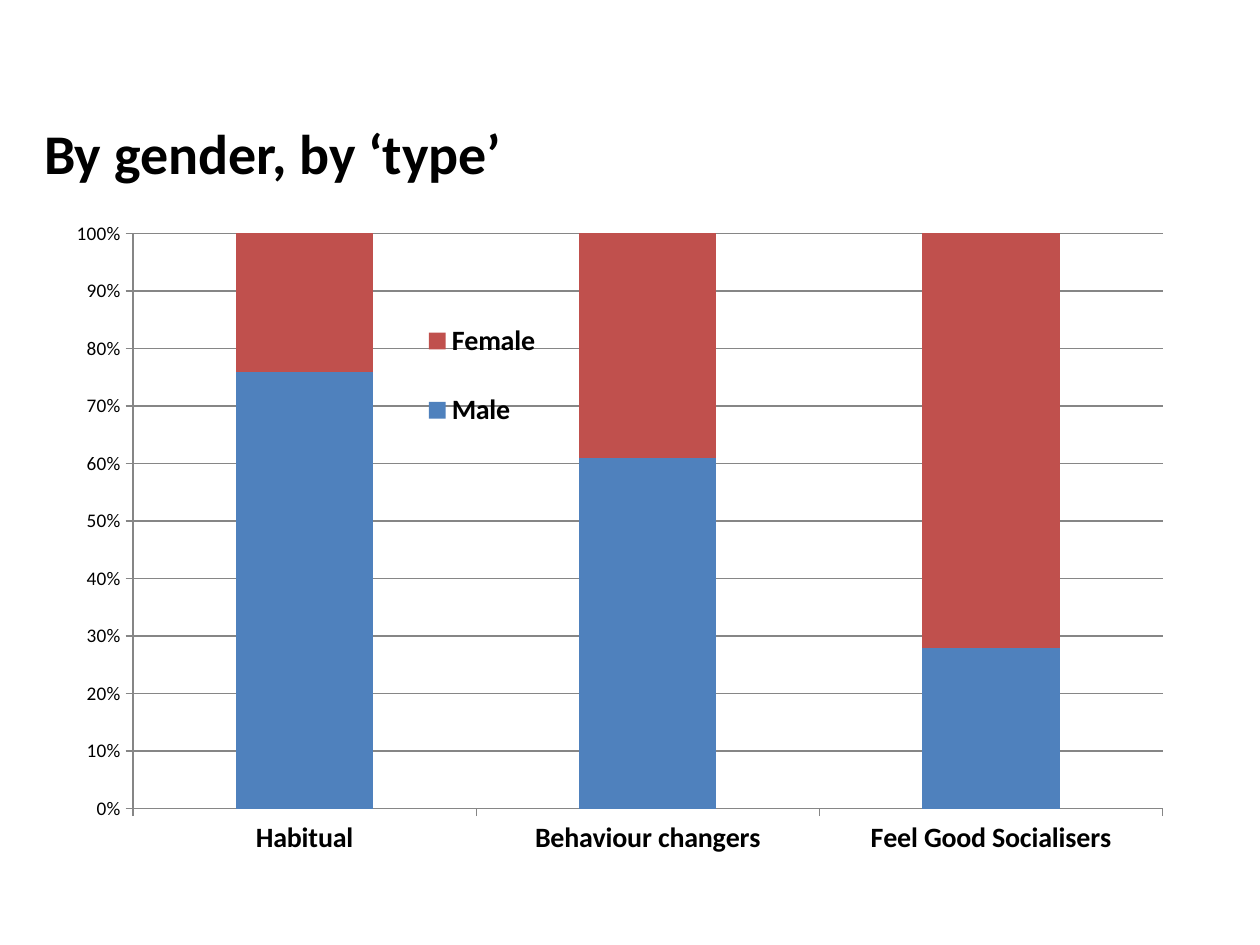
from lxml.etree import SubElement
from pptx import Presentation
from pptx.chart.data import CategoryChartData
from pptx.dml.color import RGBColor
from pptx.enum.chart import XL_CHART_TYPE, XL_LEGEND_POSITION, XL_TICK_MARK
from pptx.enum.text import MSO_ANCHOR
from pptx.oxml.ns import qn
from pptx.util import Cm, Pt

TITLE = "By gender, by ‘type’"
CATEGORIES = ["Habitual", "Behaviour changers", "Feel Good Socialisers"]
SERIES = [
    ("Male", [76, 61, 28], "4F81BD"),
    ("Female", [24, 39, 72], "C0504D"),
]
BLACK, GREY = "000000", "868686"
TITLE_FONT = {"name": "Calibri", "size": Pt(32), "bold": True}
CHART_FONT = {"name": "Calibri", "size": Pt(10)}
LABEL_FONT = {"name": "Calibri", "size": Pt(16), "bold": True}
VALUE_FONT = {"name": "Calibri", "size": Pt(11), "bold": False}
PLOT_LAYOUT = {"x": 0.07, "y": 0.05, "w": 0.9, "h": 0.83}
LEGEND_LAYOUT = {"x": 0.31, "y": 0.13, "w": 0.13, "h": 0.25}


def color(value):
    return RGBColor.from_string(value)


def set_font(font, values):
    for name, value in values.items():
        setattr(font, name, value)
    font.color.rgb = color(BLACK)


def set_line(line):
    line.color.rgb = color(GREY)
    line.width = Pt(0.75)


def set_layout(parent, position, fractions, inner=False):
    for old in parent.findall(qn("c:layout")):
        parent.remove(old)
    layout = SubElement(parent, qn("c:layout"))
    parent.insert(position, layout)
    manual = SubElement(layout, qn("c:manualLayout"))
    settings = {"layoutTarget": "inner"} if inner else {}
    settings.update(xMode="edge", yMode="edge", **fractions)
    for name, value in settings.items():
        SubElement(manual, qn(f"c:{name}")).set("val", str(value))


def add_title(page):
    box = page.shapes.add_textbox(Cm(0.64), Cm(2.11), Cm(22.86), Cm(1.9))
    frame = box.text_frame
    frame.word_wrap = True
    frame.vertical_anchor = MSO_ANCHOR.MIDDLE
    span = frame.paragraphs[0].add_run()
    span.text = TITLE
    set_font(span.font, TITLE_FONT)


def add_gender_chart(page):
    data = CategoryChartData(number_format="General")
    data.categories = CATEGORIES
    for name, values, _ in SERIES:
        data.add_series(name, values)
    chart = page.shapes.add_chart(
        XL_CHART_TYPE.COLUMN_STACKED_100,
        Cm(1.07), Cm(4.01), Cm(23.06), Cm(13.97), data,
    ).chart
    chart.has_title = False
    set_font(chart.font, CHART_FONT)

    plot = chart.plots[0]
    plot.gap_width, plot.overlap, plot.vary_by_categories = 150, 100, False
    for series, (_, _, fill) in zip(plot.series, SERIES):
        series.format.fill.solid()
        series.format.fill.fore_color.rgb = color(fill)

    for axis, font in ((chart.category_axis, LABEL_FONT), (chart.value_axis, VALUE_FONT)):
        axis.major_tick_mark = XL_TICK_MARK.OUTSIDE
        axis.minor_tick_mark = XL_TICK_MARK.NONE
        set_font(axis.tick_labels.font, font)
        set_line(axis.format.line)
    value_axis = chart.value_axis
    value_axis.has_major_gridlines = True
    set_line(value_axis.major_gridlines.format.line)
    value_axis.major_unit = 0.1
    value_axis.tick_labels.number_format = "0%"
    value_axis.tick_labels.number_format_is_linked = False

    chart.has_legend = True
    legend = chart.legend
    legend.position = XL_LEGEND_POSITION.RIGHT
    legend.include_in_layout = False
    set_font(legend.font, LABEL_FONT)

    space = chart.element
    set_layout(space.find(".//" + qn("c:plotArea")), 0, PLOT_LAYOUT, inner=True)
    set_layout(space.find(".//" + qn("c:legend")), 1, LEGEND_LAYOUT)


def main():
    deck = Presentation()
    deck.slide_width, deck.slide_height = Cm(25.4), Cm(19.05)
    page = deck.slides.add_slide(deck.slide_layouts[6])
    add_title(page)
    add_gender_chart(page)
    deck.save("out.pptx")


if __name__ == "__main__":
    main()
